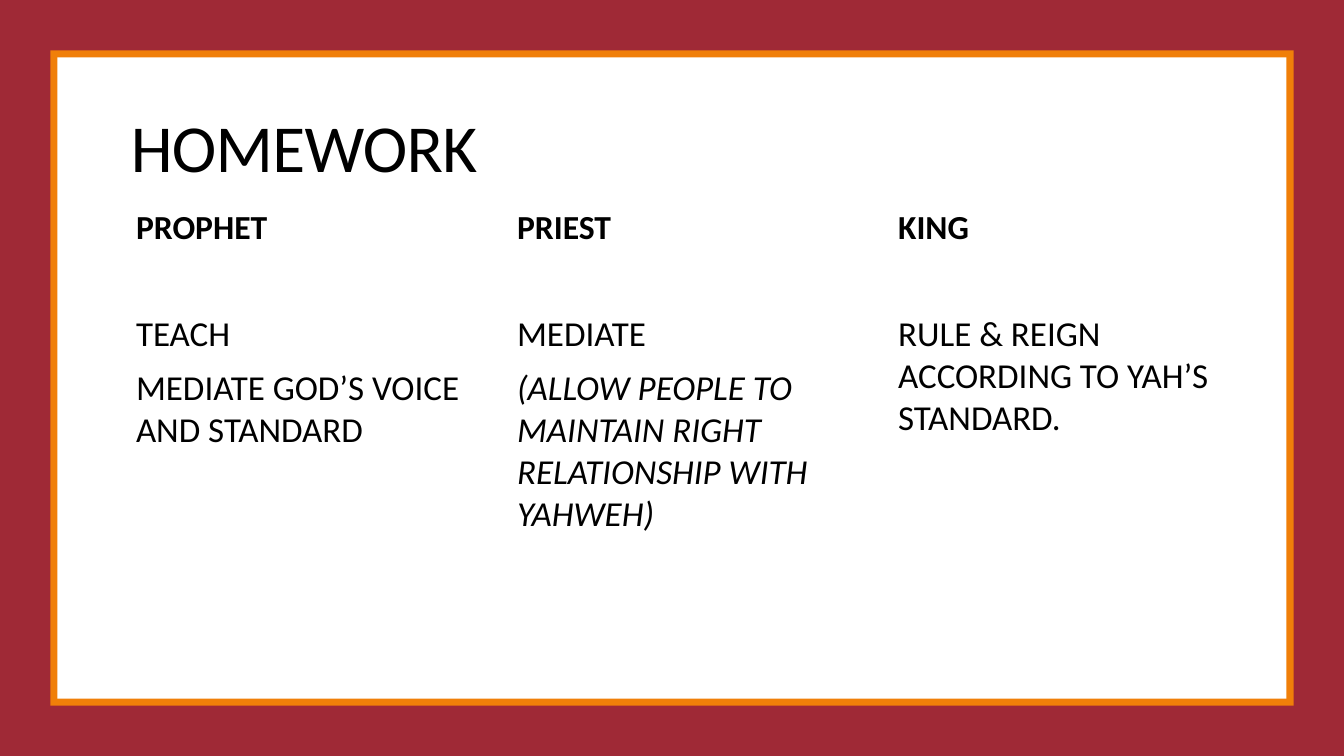
from pptx import Presentation
from pptx.dml.color import RGBColor
from pptx.enum.shapes import MSO_SHAPE
from pptx.enum.text import MSO_ANCHOR, PP_ALIGN
from pptx.util import Pt

TITLE = "HOMEWORK"
ROLES = [
    ("PROPHET", [("TEACH", False), ("MEDIATE GOD’S VOICE AND STANDARD", False)]),
    ("PRIEST", [("MEDIATE", False),
                ("(ALLOW PEOPLE TO MAINTAIN RIGHT RELATIONSHIP WITH YAHWEH)", True)]),
    ("KING", [("RULE & REIGN ACCORDING TO YAH’S STANDARD.", False)]),
]

RED = RGBColor(0x9F, 0x29, 0x36)
ORANGE = RGBColor(0xF0, 0x7F, 0x09)
WHITE = RGBColor(0xFF, 0xFF, 0xFF)
BLACK = RGBColor(0, 0, 0)
FONT = "Calibri"
WIDTH, HEIGHT = 960, 540
FRAMES = [(0, RED), (36, ORANGE), (41, WHITE)]
LEFT, COLUMN, PITCH = 86.4, 247.7, 272.2
HEAD_TOP, HEAD_HEIGHT, BODY_HEIGHT = 145.4, 36, 276.5

prs = Presentation()
prs.slide_width, prs.slide_height = Pt(WIDTH), Pt(HEIGHT)
s = prs.slides.add_slide(prs.slide_layouts[6])


def add_panel(x, y, w, h):
    left, top, right, bottom = map(Pt, (x, y, x + w, y + h))
    outline = s.shapes.build_freeform(left, top)
    outline.add_line_segments([(right, top), (right, bottom), (left, bottom)])
    sp = outline.convert_to_shape()
    sp.shadow.inherit = False
    sp.fill.background()
    sp.line.fill.background()
    return sp


def add_text(sp, paragraphs, size, insets, anchor=MSO_ANCHOR.TOP, bold=False,
             line=None, after=0, spacing=None):
    tf = sp.text_frame
    tf.word_wrap = True
    tf.vertical_anchor = anchor
    tf.margin_left, tf.margin_top, tf.margin_right, tf.margin_bottom = map(Pt, insets)
    for i, (text, italic) in enumerate(paragraphs):
        p = tf.add_paragraph() if i else tf.paragraphs[0]
        p.alignment = PP_ALIGN.LEFT
        p.space_after = Pt(after)
        p.line_spacing = line
        r = p.add_run()
        r.text = text
        r.font.name, r.font.size = FONT, Pt(size)
        r.font.bold, r.font.italic = bold, italic
        r.font.color.rgb = BLACK
        if spacing is not None:
            r.font._element.set("spc", str(spacing))


for margin, color in FRAMES:
    sp = s.shapes.add_shape(MSO_SHAPE.RECTANGLE, Pt(margin), Pt(margin),
                            Pt(WIDTH - 2 * margin), Pt(HEIGHT - 2 * margin))
    sp.shadow.inherit = False
    sp.fill.solid()
    sp.fill.fore_color.rgb = color
    sp.line.fill.background()

title = s.shapes.add_textbox(Pt(LEFT), Pt(22.3), Pt(792), Pt(114.5))
add_text(title, [(TITLE, False)], 48, (7.2, 3.6, 7.2, 3.6),
         anchor=MSO_ANCHOR.BOTTOM, line=0.85, spacing=-50)

for i, (role, duties) in enumerate(ROLES):
    x = LEFT + i * PITCH
    add_text(add_panel(x, HEAD_TOP, COLUMN, HEAD_HEIGHT), [(role, False)], 24,
             (10.8, 2, 2, 2), bold=True)
    add_text(add_panel(x, HEAD_TOP + HEAD_HEIGHT, COLUMN, BODY_HEIGHT), duties, 25,
             (10.8, 41, 2, 2), line=Pt(30), after=8.75)

prs.save("out.pptx")
